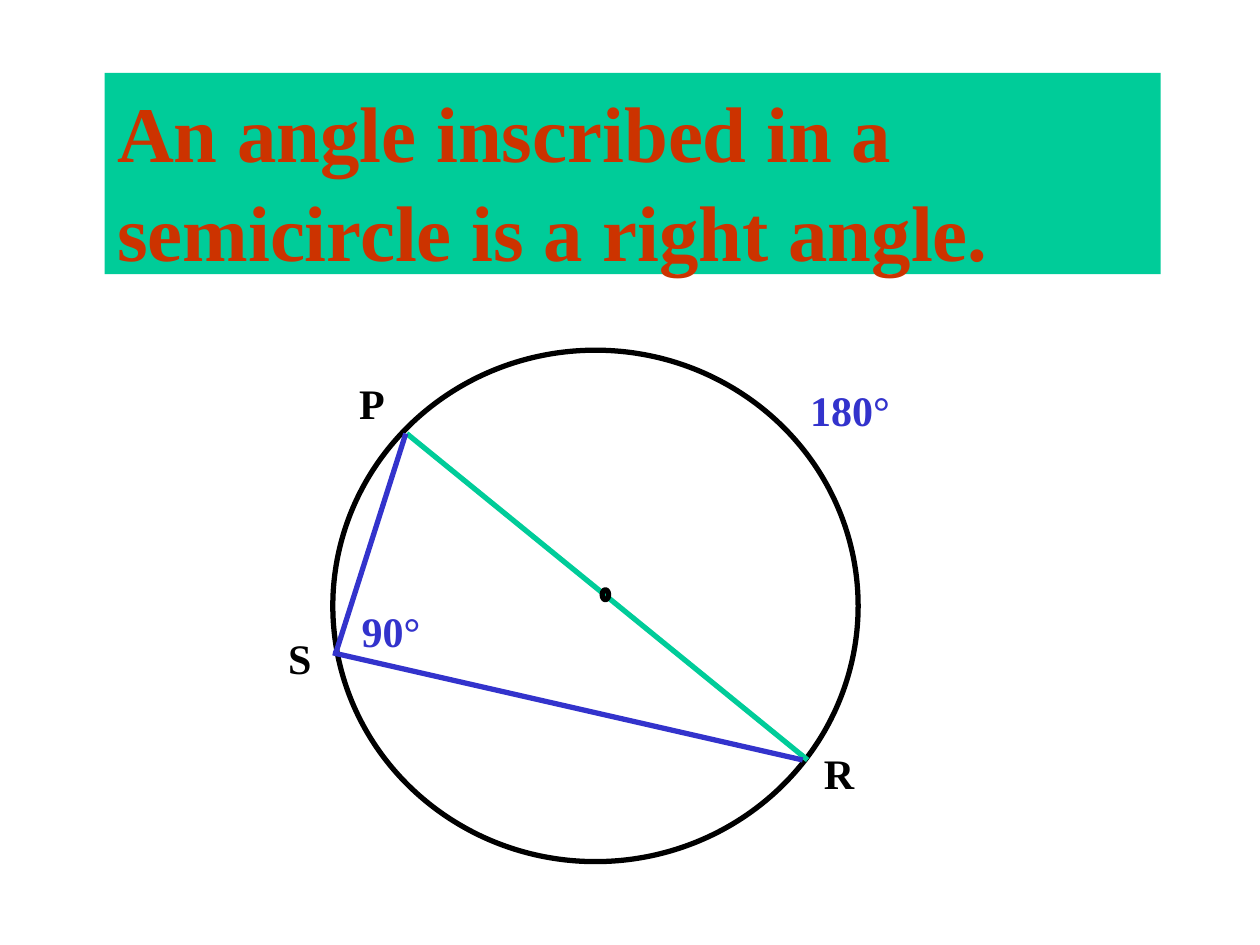
import pptx
import pptx.util
import pptx.dml.color
import pptx.enum.shapes
import pptx.enum.text
import pptx.oxml.ns
import lxml.etree

Cm = pptx.util.Cm
Pt = pptx.util.Pt
SHAPES = pptx.enum.shapes.MSO_SHAPE

BLACK, BLUE, GREEN, RED = "000000", "3333CC", "00CC99", "CC3300"
FONT = "Times New Roman"
LINE_WIDTH = 3

# Content: all positions in centimetres
TITLE = "An angle inscribed in a semicircle is a right angle."
TITLE_BOX = (2.11, 1.47, 21.29, 4.06)
CIRCLE = (6.71, 7.06, 10.59, 10.31)
CENTER_DOT = (12.14, 11.89, 0.13, 0.2)
LABEL_HEIGHT = 1.27
POINT_WIDTH, ANGLE_WIDTH = 1.32, 2.18
LABELS = [  # text, left, top, width, colour
    ("R", 16.36, 14.94, POINT_WIDTH, BLACK),
    ("P", 6.99, 7.49, POINT_WIDTH, BLACK),
    ("S", 5.56, 12.62, POINT_WIDTH, BLACK),
    ("180°", 16.08, 7.62, ANGLE_WIDTH, BLUE),
    ("90°", 7.04, 12.09, ANGLE_WIDTH, BLUE),
]
DIAMETER = ((16.28, 15.32), (8.2, 8.74), GREEN)
CHORDS = [
    ((8.18, 8.74), (6.78, 13.13), BLUE),
    ((16.18, 15.32), (6.71, 13.16), BLUE),
]


def color(value):
    return pptx.dml.color.RGBColor.from_string(value)


def write(shape, text, size, text_color):
    frame = shape.text_frame
    frame.word_wrap = True
    frame.vertical_anchor = pptx.enum.text.MSO_ANCHOR.TOP
    paragraph = frame.paragraphs[0]
    paragraph.alignment = pptx.enum.text.PP_ALIGN.LEFT
    run = paragraph.add_run()
    run.text = text
    run.font.name = FONT
    run.font.size = Pt(size)
    run.font.bold = True
    run.font.color.rgb = color(text_color)
    return paragraph


def add_ellipse(slide, box):
    ellipse = slide.shapes.add_shape(SHAPES.OVAL, *map(Cm, box))
    ellipse.shadow.inherit = False
    ellipse.fill.background()
    ellipse.line.color.rgb = color(BLACK)
    ellipse.line.width = Pt(LINE_WIDTH)


def add_segment(slide, start, end, line_color):
    segment = slide.shapes.add_connector(
        pptx.enum.shapes.MSO_CONNECTOR.STRAIGHT, *map(Cm, start + end))
    segment.line.color.rgb = color(line_color)
    segment.line.width = Pt(LINE_WIDTH)
    lxml.etree.SubElement(segment._element.spPr, pptx.oxml.ns.qn("a:effectLst"))


presentation = pptx.Presentation()
presentation.slide_width = Cm(25.4)
presentation.slide_height = Cm(19.05)
slide = presentation.slides.add_slide(presentation.slide_layouts[6])

# Theorem banner
banner = slide.shapes.add_shape(SHAPES.RECTANGLE, *map(Cm, TITLE_BOX))
banner.shadow.inherit = False
banner.fill.solid()
banner.fill.fore_color.rgb = color(GREEN)
banner.line.fill.background()
write(banner, TITLE, 45, RED).line_spacing = 1.05

# Circle with its diameter, centre and inscribed angle
add_ellipse(slide, CIRCLE)
add_segment(slide, *DIAMETER)
add_ellipse(slide, CENTER_DOT)
for chord in CHORDS:
    add_segment(slide, *chord)

# Point names and angle measures
for text, left, top, width, label_color in LABELS:
    label = slide.shapes.add_textbox(Cm(left), Cm(top), Cm(width), Cm(LABEL_HEIGHT))
    write(label, text, 24, label_color)

presentation.save("out.pptx")
